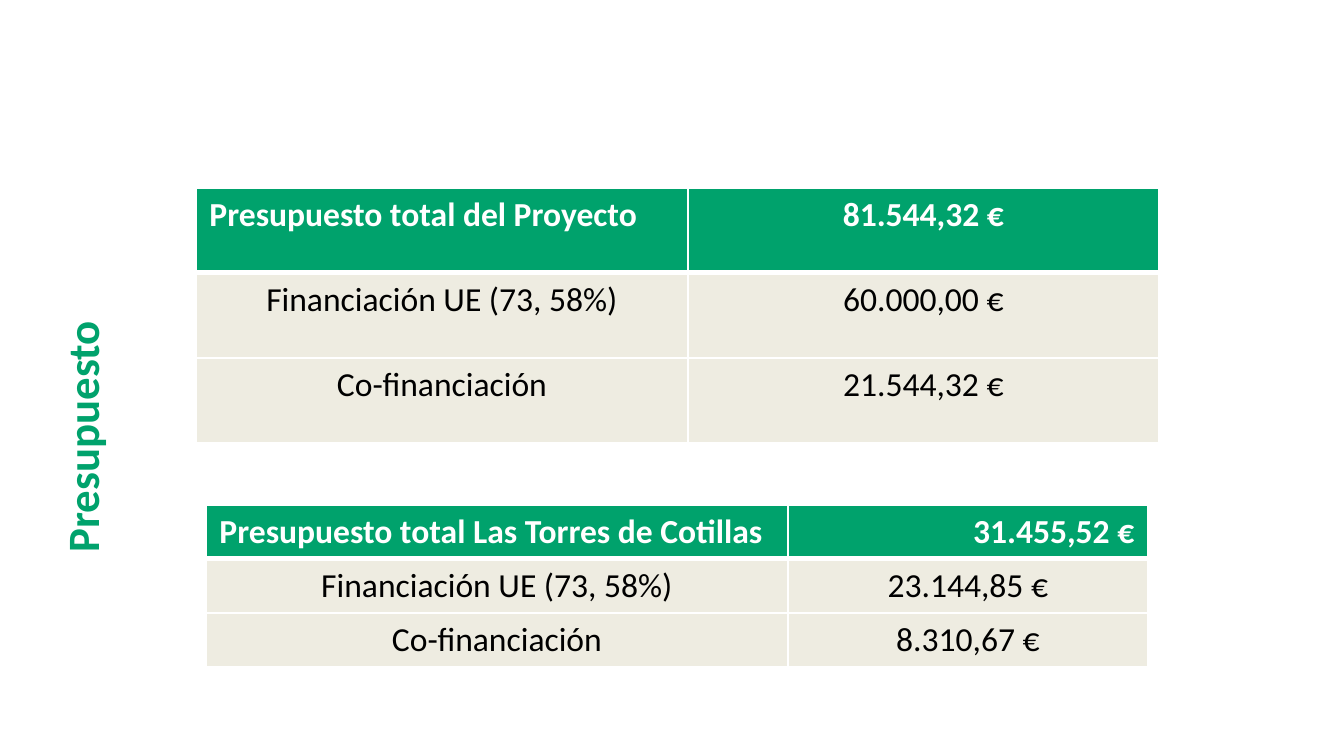
import pptx
import pptx.util
import pptx.dml.color
import pptx.enum.text
import pptx.oxml
import pptx.oxml.ns

PX = 914400 / 134.4  # EMU per px
GREEN, BEIGE, WHITE, BLACK = "00A26C", "EEECE1", "FFFFFF", "000000"
ALIGN = pptx.enum.text.PP_ALIGN


def px(n):
    return pptx.util.Emu(round(n * PX))


def rgb(value):
    return pptx.dml.color.RGBColor.from_string(value)


def write(tf, text, size=18, color=BLACK, bold=False, align=ALIGN.LEFT, spacing=None):
    p = tf.paragraphs[0]
    p.alignment = align
    p.line_spacing = spacing
    r = p.add_run()
    r.text = text
    r.font.name = "Calibri"
    r.font.size = pptx.util.Pt(size)
    r.font.bold = bold
    r.font.color.rgb = rgb(color)


def set_borders(cell, top, bottom):
    """White cell borders, widths in points; they precede the fill in tcPr."""
    tcPr = cell._tc.get_or_add_tcPr()
    for i, (side, width) in enumerate(zip("LRTB", (1, 1, top, bottom))):
        tcPr.insert(i, pptx.oxml.parse_xml(
            f'<a:ln{side} {pptx.oxml.ns.nsdecls("a")} w="{pptx.util.Pt(width)}">'
            f'<a:solidFill><a:srgbClr val="{WHITE}"/></a:solidFill></a:ln{side}>'))


def add_side_title(s, x, y, w, h, text):
    sp = s.shapes.add_textbox(px(x), px(y), px(w), px(h))
    sp.rotation = 270
    tf = sp.text_frame
    tf.word_wrap = True
    tf.vertical_anchor = pptx.enum.text.MSO_ANCHOR.MIDDLE
    write(tf, text, size=24, color=GREEN, bold=True, spacing=0.9)


def add_budget_table(s, x, y, cols, row_h, rows, total_align):
    table = s.shapes.add_table(len(rows), len(cols), px(x), px(y),
                               px(sum(cols)), px(row_h * len(rows))).table
    for column, w in zip(table.columns, cols):
        column.width = px(w)
    for i, values in enumerate(rows):
        table.rows[i].height = px(row_h)
        header = i == 0
        aligns = (ALIGN.LEFT, total_align) if header else (ALIGN.CENTER, ALIGN.CENTER)
        for j, (text, align) in enumerate(zip(values, aligns)):
            cell = table.cell(i, j)
            cell.fill.solid()
            cell.fill.fore_color.rgb = rgb(GREEN if header else BEIGE)
            set_borders(cell, top=3 if i == 1 else 1, bottom=3 if header else 1)
            write(cell.text_frame, text, color=WHITE if header else BLACK,
                  bold=header, align=align)


def main():
    prs = pptx.Presentation()
    prs.slide_width, prs.slide_height = px(1344), px(756)
    s = prs.slides.add_slide(prs.slide_layouts[6])

    # Vertical title
    add_side_title(s, -99, 335, 367, 94, "Presupuesto")

    # Whole project budget
    add_budget_table(s, 196, 188, (492, 471), 85, [
        ("Presupuesto total del Proyecto", "81.544,32 €"),
        ("Financiación UE (73, 58%)", "60.000,00 €"),
        ("Co-financiación", "21.544,32 €"),
    ], ALIGN.CENTER)

    # Municipal budget
    add_budget_table(s, 206, 505, (582, 360), 54, [
        ("Presupuesto total Las Torres de Cotillas", "31.455,52 €"),
        ("Financiación UE (73, 58%)", "23.144,85 €"),
        ("Co-financiación", "8.310,67 €"),
    ], ALIGN.RIGHT)

    prs.save("out.pptx")


if __name__ == "__main__":
    main()
